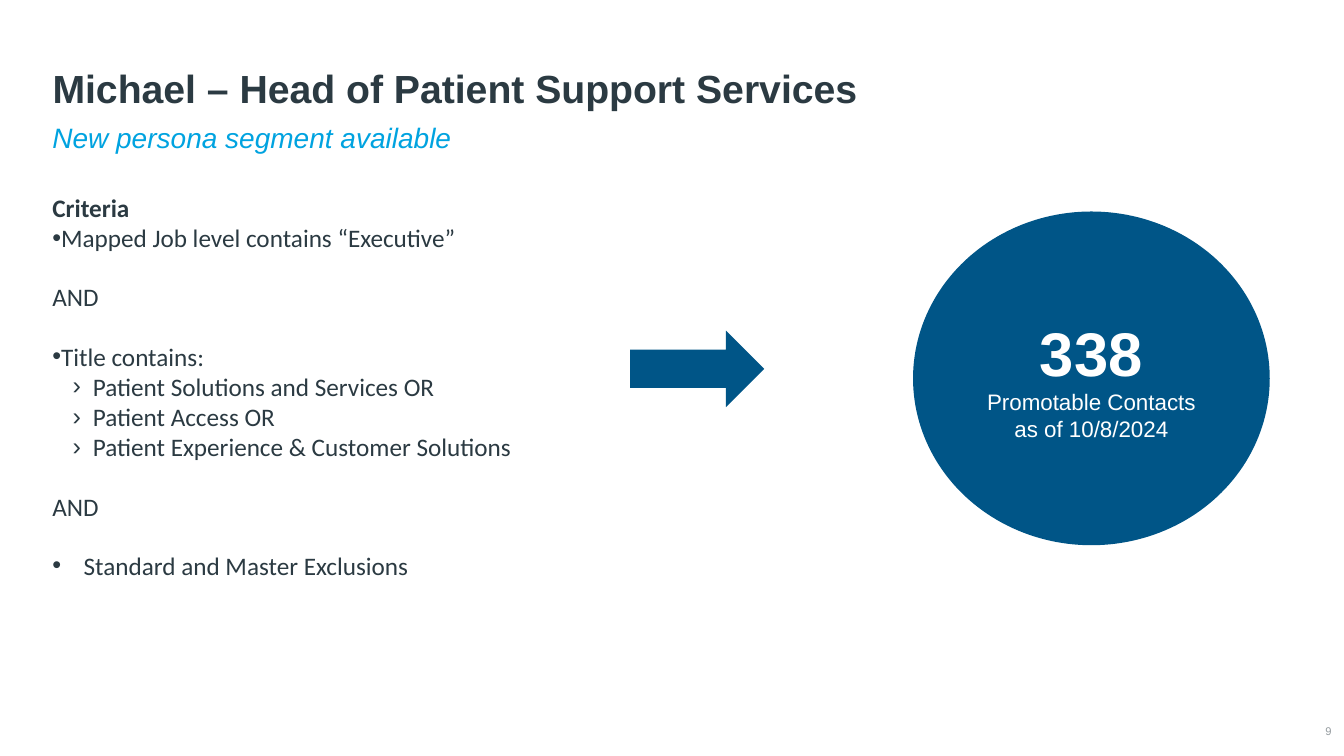
"""Build the persona segment slide: criteria, arrow and contact count."""
from lxml import etree
from pptx import Presentation
from pptx.dml.color import RGBColor
from pptx.enum.shapes import MSO_SHAPE
from pptx.enum.text import MSO_ANCHOR, MSO_AUTO_SIZE, PP_ALIGN
from pptx.oxml.ns import qn
from pptx.util import Cm, Pt

LEFT, CENTER, RIGHT = PP_ALIGN.LEFT, PP_ALIGN.CENTER, PP_ALIGN.RIGHT
TOP, MIDDLE, BOTTOM = MSO_ANCHOR.TOP, MSO_ANCHOR.MIDDLE, MSO_ANCHOR.BOTTOM
NO_FIT = MSO_AUTO_SIZE.NONE
ARROW, ELLIPSE = MSO_SHAPE.RIGHT_ARROW, MSO_SHAPE.OVAL
INK, SKY, NAVY, GREY, WHITE = "2B3A42", "00A3E0", "005587", "959CA0", "FFFFFF"
MARGIN, WIDTH = 1.07, 31.5
GAP = 20.7


def rgb(value):
    return RGBColor.from_string(value)


def add_run(p, text, color, **formats):
    r = p.add_run()
    r.text = text
    r.font.color.rgb = rgb(color)
    for name, value in formats.items():
        setattr(r.font, name, value)


prs = Presentation()
prs.slide_width, prs.slide_height = Cm(33.87), Cm(19.05)
s = prs.slides.add_slide(prs.slide_layouts[5])

title = s.shapes.title
subtitle, criteria, number = [s.shapes.add_textbox(0, 0, 0, 0) for _ in range(3)]
frames = [
    (title, MARGIN, 0.81, WIDTH, 2.13, BOTTOM),
    (subtitle, MARGIN, 3, WIDTH, 1.12, TOP),
    (criteria, MARGIN, 4.72, WIDTH, 12.73, TOP),
    (number, 32.56, 18.19, 1, 0.48, MIDDLE),
]
for sp, left, top, width, height, anchor in frames:
    sp.left, sp.top, sp.width, sp.height = Cm(left), Cm(top), Cm(width), Cm(height)
    tf = sp.text_frame
    tf.word_wrap, tf.auto_size, tf.vertical_anchor = True, NO_FIT, anchor
for side in ("left", "top", "right", "bottom"):
    setattr(number.text_frame, f"margin_{side}", 0)

headings = [
    (title, "Michael – Head of Patient Support Services", INK, LEFT, 0.9,
     {"size": Pt(28), "bold": True}),
    (subtitle, "New persona segment available", SKY, LEFT, 0.9,
     {"size": Pt(20), "italic": True}),
    (number, "9", GREY, RIGHT, 1, {"size": Pt(8)}),
]
for sp, text, color, align, spacing, formats in headings:
    p = sp.text_frame.paragraphs[0]
    p.alignment, p.line_spacing = align, spacing
    add_run(p, text, color, name="Arial", **formats)

bullets = {
    "flush": ("•", 0, -0.51),
    "sub": ("›", 1.02, -0.51),
    "hang": ("•", 0.79, -0.79),
}
lines = [
    ("Criteria", None, 0),
    ("Mapped Job level contains “Executive”", "flush", 0),
    ("AND", None, GAP),
    ("Title contains:", "flush", GAP),
    ("Patient Solutions and Services OR", "sub", 0),
    ("Patient Access OR", "sub", 0),
    ("Patient Experience & Customer Solutions", "sub", 0),
    ("AND", None, GAP),
    ("Standard and Master Exclusions", "hang", GAP),
]
tf = criteria.text_frame
for i, (text, style, before) in enumerate(lines):
    p = tf.add_paragraph() if i else tf.paragraphs[0]
    if before:
        p.space_before = Pt(before)
    if style:
        char, margin, indent = bullets[style]
        pPr = p._p.get_or_add_pPr()
        pPr.set("marL", str(Cm(margin)))
        pPr.set("indent", str(Cm(indent)))
        etree.SubElement(pPr, qn("a:buFont"), typeface="Arial")
        etree.SubElement(pPr, qn("a:buChar"), char=char)
    add_run(p, text, INK, name="Calibri", size=Pt(18), bold=i == 0)

arrow = s.shapes.add_shape(ARROW, Cm(15.88), Cm(8.33), Cm(3.38), Cm(1.93))
circle = s.shapes.add_shape(ELLIPSE, Cm(23.01), Cm(5.33), Cm(8.99), Cm(8.41))
for sp in (arrow, circle):
    sp.shadow.inherit = False
    sp.fill.solid()
    sp.fill.fore_color.rgb = rgb(NAVY)
    sp.line.fill.background()

tf = circle.text_frame
tf.word_wrap, tf.vertical_anchor = True, MIDDLE
counts = [("338", 44, True), ("Promotable Contacts as of 10/8/2024", 16, False)]
for i, (text, size, bold) in enumerate(counts):
    p = tf.add_paragraph() if i else tf.paragraphs[0]
    p.alignment = CENTER
    add_run(p, text, WHITE, name="Arial", size=Pt(size), bold=bold)

prs.save("out.pptx")
